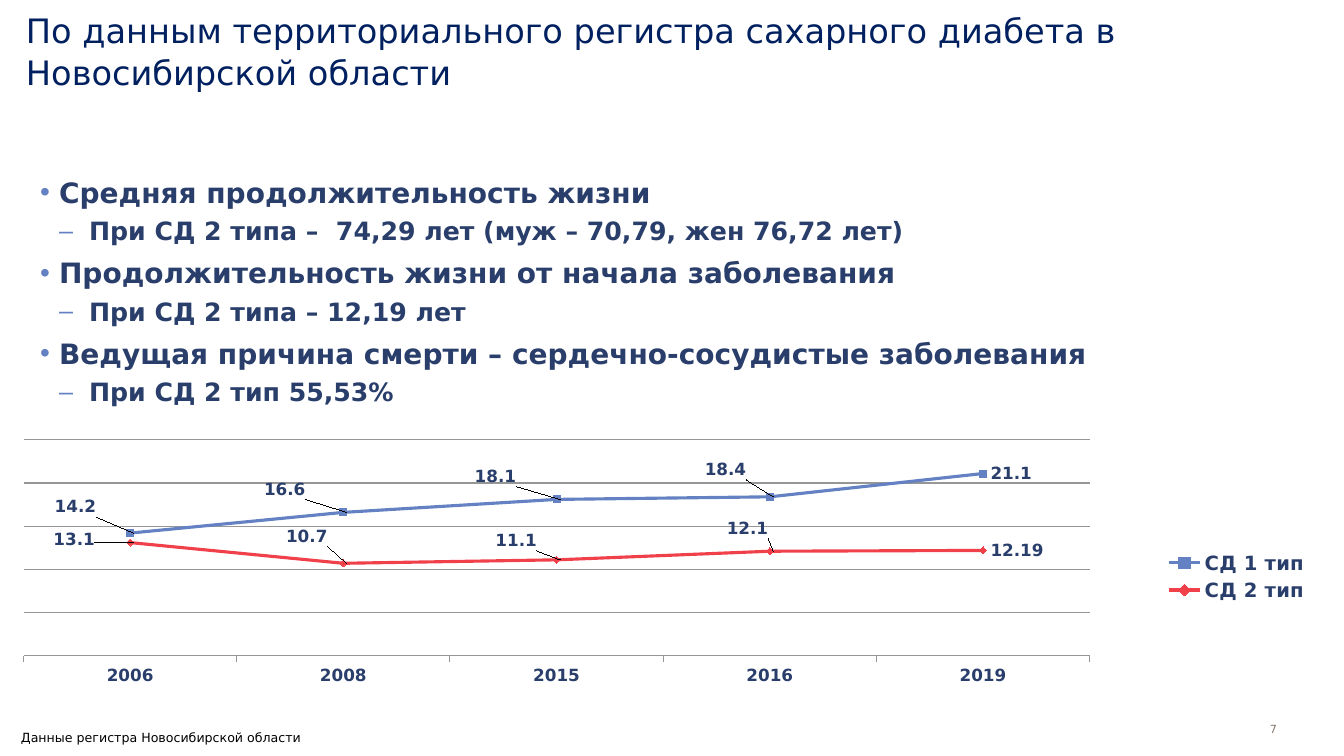
"""Build the slide on the regional diabetes register."""
from lxml import etree
from pptx import Presentation
from pptx.chart.data import CategoryChartData
from pptx.dml.color import RGBColor
from pptx.enum import chart as ch, text as tx
from pptx.oxml import ns
from pptx.util import Pt

TITLE = "По данным территориального регистра сахарного диабета в Новосибирской области"
FACTS = [
    ("Средняя продолжительность жизни",
     "При СД 2 типа –  74,29 лет (муж – 70,79, жен 76,72 лет)"),
    ("Продолжительность жизни от начала заболевания",
     "При СД 2 типа – 12,19 лет"),
    ("Ведущая причина смерти – сердечно-сосудистые заболевания",
     "При СД 2 тип 55,53%"),
]
SOURCE = "Данные регистра Новосибирской области"
PAGE = "7"
YEARS = ["2006", "2008", "2015", "2016", "2019"]
SERIES = [
    {"name": "СД 1 тип", "values": [14.2, 16.6, 18.1, 18.4, 21.1],
     "color": "blue", "marker": ch.XL_MARKER_STYLE.SQUARE,
     "shifts": [(-83, -26), (-87, -23), (-90, -23), (-72, -27)]},
    {"name": "СД 2 тип", "values": [13.1, 10.7, 11.1, 12.1, 12.19],
     "color": "red", "marker": ch.XL_MARKER_STYLE.DIAMOND,
     "shifts": [(-84, -3), (-65, -27), (-69, -19), (-50, -23)]},
]
COLORS = {"title": "002060", "text": "293E6A", "blue": "6482C3", "red": "F0414B",
          "grid": "969696", "page": "82786F", "black": "000000", "chart": "5A5A5A"}
FONT = "DejaVu Sans"
LEVELS = [{"size": 20, "before": 6, "bullet": "•", "left": 19, "hang": 19},
          {"size": 18, "before": 4, "bullet": "–", "left": 49, "hang": 30}]
CHART_W, CHART_H = 1296, 287


def px(n):
    return round(n * 914400 / 100.8)


def rgb(name):
    return RGBColor.from_string(COLORS[name])


def style(font, size, color, bold=False, name=FONT):
    font.size, font.bold, font.name = Pt(size), bold, name
    font.color.rgb = rgb(color)


def place(sp, left, top, width, height):
    sp.left, sp.top, sp.width, sp.height = map(px, (left, top, width, height))


def set_frame(tf, anchor, inset=None, bottom=0):
    tf.word_wrap, tf.auto_size, tf.vertical_anchor = True, tx.MSO_AUTO_SIZE.NONE, anchor
    if inset is not None:
        tf.margin_left = tf.margin_top = tf.margin_right = px(inset)
        tf.margin_bottom = px(bottom)


def write(p, text, size, color, bold=False, align=tx.PP_ALIGN.LEFT, before=0, spacing=1.0):
    p.alignment, p.space_before, p.line_spacing = align, Pt(before), spacing
    r = p.add_run()
    r.text = text
    style(r.font, size, color, bold)


def add_bullet(p, bullet, left, hang):
    pPr = p._p.get_or_add_pPr()
    pPr.set("marL", str(px(left)))
    pPr.set("indent", str(-px(hang)))
    clr = etree.SubElement(pPr, ns.qn("a:buClr"))
    etree.SubElement(clr, ns.qn("a:srgbClr"), val=COLORS["blue"])
    etree.SubElement(pPr, ns.qn("a:buFont"), typeface="Arial")
    etree.SubElement(pPr, ns.qn("a:buChar"), char=bullet)


def make_layout(target=None, **values):
    layout = etree.Element(ns.qn("c:layout"))
    manual = etree.SubElement(layout, ns.qn("c:manualLayout"))
    if target:
        etree.SubElement(manual, ns.qn("c:layoutTarget"), val=target)
        for mode in ("xMode", "yMode"):
            etree.SubElement(manual, ns.qn(f"c:{mode}"), val="edge")
    for key, value in values.items():
        etree.SubElement(manual, ns.qn(f"c:{key}"), val=f"{value:.3f}")
    return layout


def add_title(s):
    sp = s.shapes.title
    place(sp, 26, 76, 1317, 57)
    set_frame(sp.text_frame, tx.MSO_ANCHOR.BOTTOM, 0, bottom=41)
    write(sp.text_frame.paragraphs[0], TITLE, 24, "title", spacing=1.04)


def add_facts(s):
    sp = s.placeholders[1]
    place(sp, 40, 174, 1237, 241)
    tf = sp.text_frame
    set_frame(tf, tx.MSO_ANCHOR.TOP, 0)
    lines = [(level, line) for fact in FACTS for level, line in enumerate(fact)]
    for i, (level, line) in enumerate(lines):
        p = tf.add_paragraph() if i else tf.paragraphs[0]
        p.level, fmt = level, LEVELS[level]
        write(p, line, fmt["size"], "text", True, before=fmt["before"], spacing=1.04)
        add_bullet(p, fmt["bullet"], fmt["left"], fmt["hang"])


def add_note(s, box, text, size, color, anchor, inset=None, align=tx.PP_ALIGN.LEFT):
    tf = s.shapes.add_textbox(*map(px, box)).text_frame
    set_frame(tf, anchor, inset)
    write(tf.paragraphs[0], text, size, color, align=align)


def format_series(series, item):
    color = rgb(item["color"])
    series.smooth = False
    series.format.line.color.rgb, series.format.line.width = color, Pt(2.25)
    series.marker.style, series.marker.size = item["marker"], 5
    for part in (series.marker.format.fill, series.marker.format.line.fill):
        part.solid()
        part.fore_color.rgb = color
    labels = series.data_labels
    labels.show_value, labels.position = True, ch.XL_LABEL_POSITION.RIGHT
    style(labels.font, 12, "text", True)
    for i, (dx, dy) in enumerate(item["shifts"]):
        label = series.points[i].data_label
        style(label.font, 12, "text", True)
        label.position = ch.XL_LABEL_POSITION.RIGHT
        idx = labels._element.findall(ns.qn("c:dLbl"))[i].find(ns.qn("c:idx"))
        idx.addnext(make_layout(x=dx / CHART_W, y=dy / CHART_H))


def add_line_chart(s):
    data = CategoryChartData()
    data.categories = YEARS
    for item in SERIES:
        data.add_series(item["name"], item["values"])
    chart = s.shapes.add_chart(ch.XL_CHART_TYPE.LINE_MARKERS, px(23), px(433),
                               px(CHART_W), px(CHART_H), data).chart
    style(chart.font, 18, "chart", name="Arial")
    chart.has_title = False
    chart.has_legend = True
    chart.legend.position = ch.XL_LEGEND_POSITION.RIGHT
    chart.legend.include_in_layout = False
    style(chart.legend.font, 14, "text", True)
    years, values = chart.category_axis, chart.value_axis
    style(years.tick_labels.font, 12, "text", True)
    years.major_tick_mark = ch.XL_TICK_MARK.OUTSIDE
    values.minimum_scale, values.maximum_scale, values.major_unit = 0, 25, 5
    values.has_major_gridlines, values.visible = True, False
    for line in (years.format.line, values.major_gridlines.format.line):
        line.color.rgb, line.width = rgb("grid"), Pt(0.75)
    plot = chart.plots[0]
    plot.vary_by_categories = False
    area = chart._chartSpace.chart.plotArea
    for old in area.findall(ns.qn("c:layout")):
        area.remove(old)
    area.insert(0, make_layout("inner", x=0, y=0.024, w=0.823, h=0.752))
    for series, item in zip(plot.series, SERIES):
        format_series(series, item)


def main():
    prs = Presentation()
    prs.slide_width, prs.slide_height = px(1344), px(756)
    s = prs.slides.add_slide(prs.slide_layouts[1])
    add_title(s)
    add_facts(s)
    add_note(s, (1212, 696, 65, 40), PAGE, 8, "page", tx.MSO_ANCHOR.BOTTOM, 0,
             tx.PP_ALIGN.RIGHT)
    add_note(s, (11, 725, 672, 25), SOURCE, 9, "black", tx.MSO_ANCHOR.TOP)
    add_line_chart(s)
    prs.save("out.pptx")


if __name__ == "__main__":
    main()
